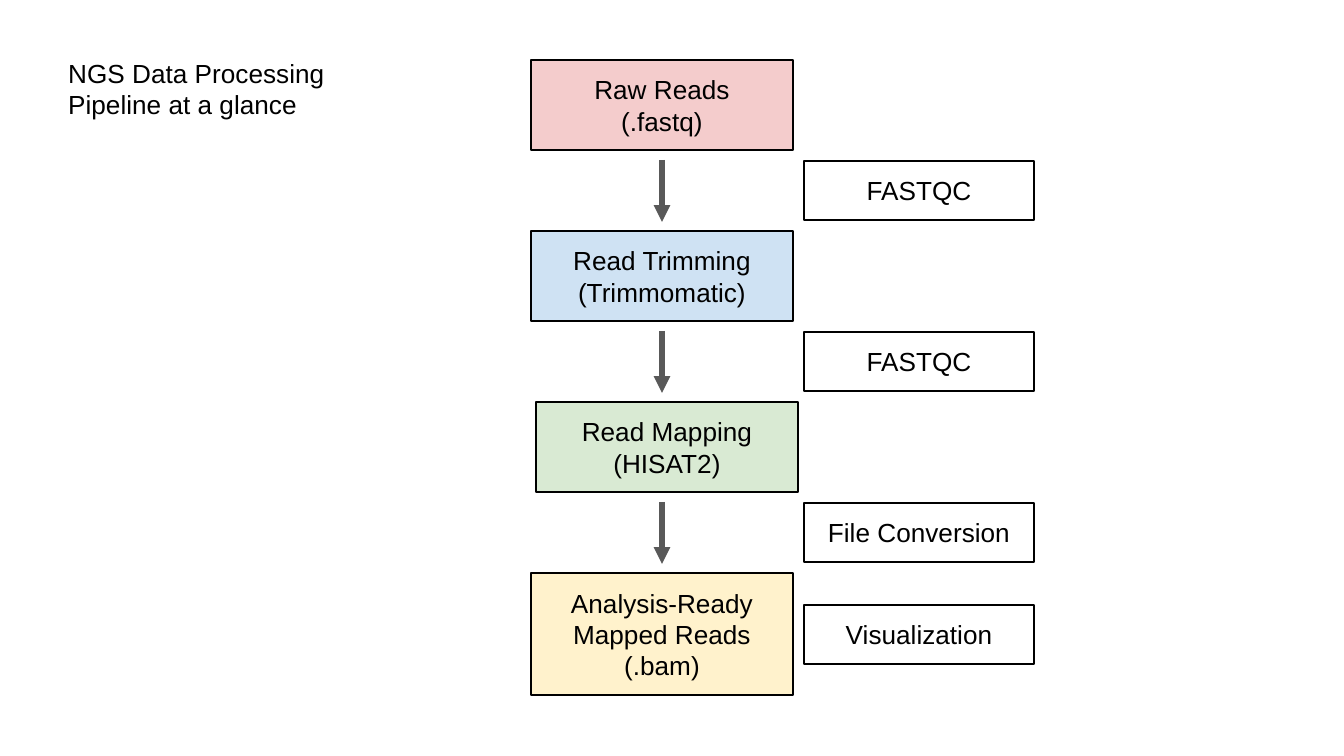
import pptx
import pptx.util
import pptx.dml.color
import pptx.enum.shapes
import pptx.enum.text
import pptx.oxml.ns
import lxml.etree

RGB = pptx.dml.color.RGBColor
BLACK = RGB(0x00, 0x00, 0x00)
GRAY = RGB(0x59, 0x59, 0x59)
PINK = RGB(0xF4, 0xCC, 0xCC)
BLUE = RGB(0xCF, 0xE2, 0xF3)
GREEN = RGB(0xD9, 0xEA, 0xD3)
CREAM = RGB(0xFF, 0xF2, 0xCC)

SCALE = 914400 / 134.4
PITCH = 171  # from one step to the next

# text, fill, shift to the right, height
STEPS = [
    ("Raw Reads\n(.fastq)", PINK, 0, 90),
    ("Read Trimming\n(Trimmomatic)", BLUE, 0, 90),
    ("Read Mapping\n(HISAT2)", GREEN, 5, 90),
    ("Analysis-Ready Mapped Reads (.bam)", CREAM, 0, 122),
]
# text, top
TOOLS = [
    ("FASTQC", 0),
    ("FASTQC", PITCH),
    ("File Conversion", 2 * PITCH),
    ("Visualization", 444),
]


def px(*vals):
    return [pptx.util.Emu(round(val * SCALE)) for val in vals]


def write(shape, text, align, anchor):
    frame = shape.text_frame
    frame.word_wrap = True
    frame.auto_size = pptx.enum.text.MSO_AUTO_SIZE.SHAPE_TO_FIT_TEXT
    frame.vertical_anchor = anchor
    inset = pptx.util.Inches(0.1)
    frame.margin_left = frame.margin_right = inset
    frame.margin_top = frame.margin_bottom = inset
    frame.text = text
    for para in frame.paragraphs:
        para.alignment = align
        para.font.name = "Arial"
        para.font.size = pptx.util.Pt(14)
        para.font.color.rgb = BLACK


def add_title(slide, left, top, width, height):
    box = slide.shapes.add_textbox(*px(left, top, width, height))
    write(box, "NGS Data Processing Pipeline at a glance",
          pptx.enum.text.PP_ALIGN.LEFT, pptx.enum.text.MSO_ANCHOR.TOP)


def add_box(slide, text, fill, left, top, width, height):
    """Add an outlined box of centred text; a fill of None leaves it clear."""
    box = slide.shapes.add_shape(
        pptx.enum.shapes.MSO_SHAPE.RECTANGLE, *px(left, top, width, height))
    box.shadow.inherit = False
    if fill is None:
        box.fill.background()
    else:
        box.fill.solid()
        box.fill.fore_color.rgb = fill
    box.line.color.rgb = BLACK
    box.line.width = pptx.util.Pt(0.75)
    write(box, text, pptx.enum.text.PP_ALIGN.CENTER,
          pptx.enum.text.MSO_ANCHOR.MIDDLE)


def add_arrow(slide, x, top, height):
    arrow = slide.shapes.add_connector(
        pptx.enum.shapes.MSO_CONNECTOR.STRAIGHT, *px(x, top, x, top + height))
    arrow.line.color.rgb = GRAY
    arrow.line.width = pptx.util.Pt(3)
    qn = pptx.oxml.ns.qn
    lxml.etree.SubElement(arrow.line._ln, qn("a:tailEnd"), type="triangle")
    lxml.etree.SubElement(arrow._element.spPr, qn("a:effectLst"))


def add_steps(slide, left, top, width):
    """Stack the steps, with an arrow in each gap."""
    for row, (text, fill, shift, height) in enumerate(STEPS):
        y = top + row * PITCH
        add_box(slide, text, fill, left + shift, y, width, height)
        if row < len(STEPS) - 1:
            add_arrow(slide, left + width / 2, y + 100, 62)


def add_tools(slide, left, top, width):
    for text, y in TOOLS:
        add_box(slide, text, None, left, top + y, width, 59)


def main():
    deck = pptx.Presentation()
    deck.slide_width, deck.slide_height = px(1344, 756)
    slide = deck.slides.add_slide(deck.slide_layouts[6])
    add_title(slide, 55, 44, 302, 90)
    add_steps(slide, 531, 60, 262)
    add_tools(slide, 804, 161, 230)
    deck.save("out.pptx")


if __name__ == "__main__":
    main()
